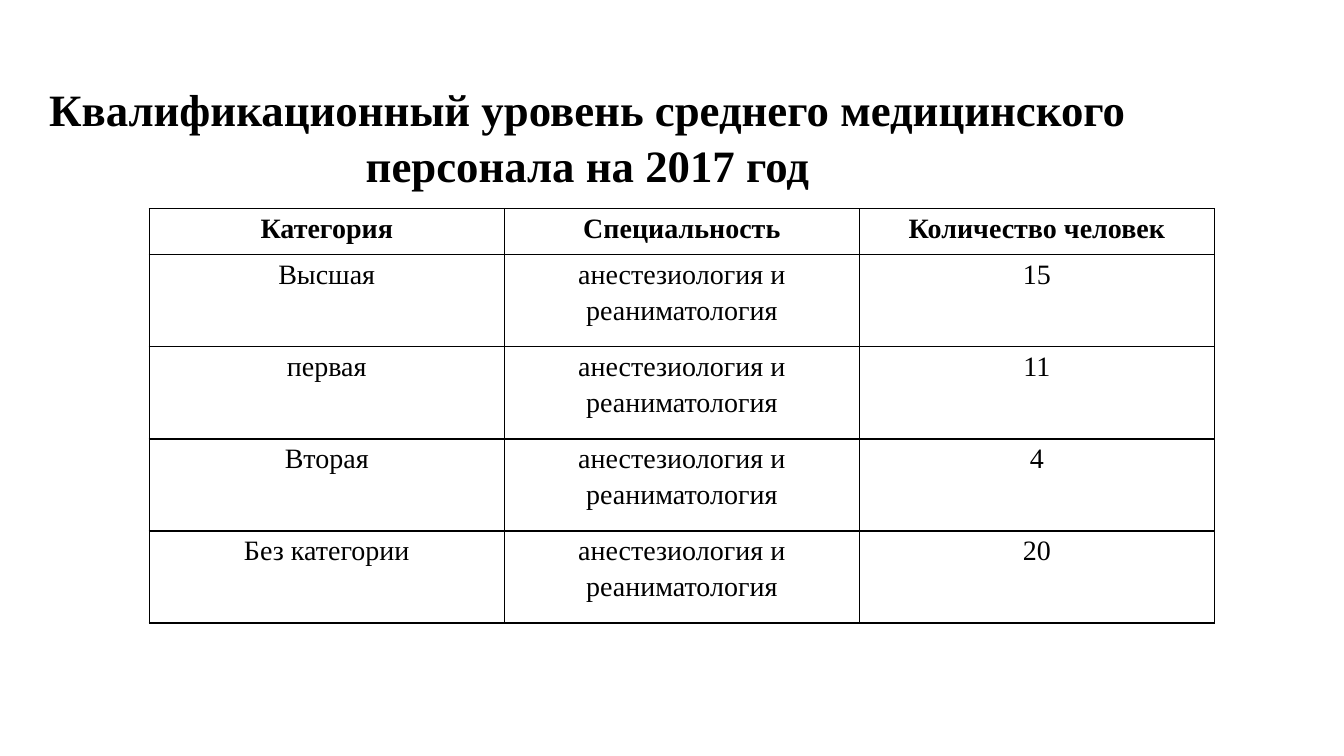
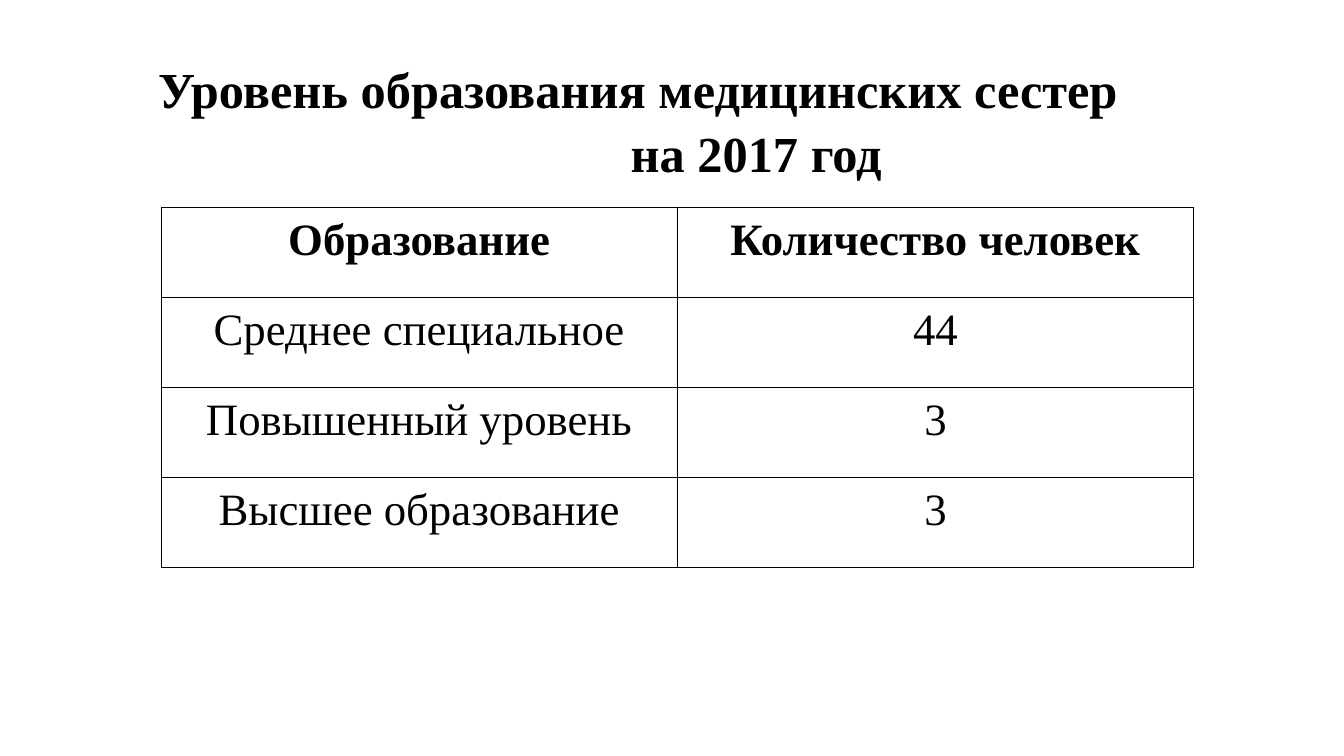
from dataclasses import dataclass

from lxml.etree import SubElement
from pptx import Presentation
from pptx.dml.color import RGBColor
from pptx.enum.text import MSO_ANCHOR, MSO_AUTO_SIZE, PP_ALIGN
from pptx.oxml.ns import qn
from pptx.presentation import Presentation as Deck
from pptx.slide import Slide
from pptx.table import _Cell as Cell
from pptx.text.text import _Paragraph as Paragraph
from pptx.util import Cm, Pt

FONT = "Times New Roman"
INK = "000000"
SPECIALTY = "анестезиология и реаниматология"


@dataclass(frozen=True)
class TitleLine:
    text: str
    indent: float = 0


@dataclass(frozen=True)
class Title:
    lines: tuple[TitleLine, ...]
    size: float
    top: float
    width: float
    height: float


@dataclass(frozen=True)
class Grid:
    rows: tuple[tuple[str, ...], ...]
    size: float
    left: float
    top: float
    column_width: float
    header_height: float
    row_height: float


@dataclass(frozen=True)
class Page:
    title: Title
    grid: Grid


PAGES = (
    Page(
        Title(
            (
                TitleLine("Квалификационный уровень среднего медицинского"),
                TitleLine("персонала на 2017 год"),
            ),
            size=32, top=1.91, width=29.62, height=3,
        ),
        Grid(
            (
                ("Категория", "Специальность", "Количество человек"),
                ("Высшая", SPECIALTY, "15"),
                ("первая", SPECIALTY, "11"),
                ("Вторая", SPECIALTY, "4"),
                ("Без категории", SPECIALTY, "20"),
            ),
            size=20, left=3.76, top=5.26, column_width=8.95,
            header_height=1.16, row_height=2.32,
        ),
    ),
    Page(
        Title(
            (
                TitleLine("Уровень образования медицинских сестер"),
                TitleLine("на 2017 год", indent=5.95),
            ),
            size=36, top=1.4, width=32.16, height=3.2,
        ),
        Grid(
            (
                ("Образование", "Количество человек"),
                ("Среднее специальное", "44"),
                ("Повышенный уровень", "3"),
                ("Высшее образование", "3"),
            ),
            size=32, left=4.06, top=5.23, column_width=13.01,
            header_height=2.27, row_height=2.27,
        ),
    ),
)


def color(value: str) -> RGBColor:
    return RGBColor.from_string(value)


def write(para: Paragraph, text: str, *, size: float, bold: bool, spacing: float) -> None:
    para.alignment = PP_ALIGN.CENTER
    para.line_spacing = spacing
    span = para.add_run()
    span.text = text
    span.font.name = FONT
    span.font.size = Pt(size)
    span.font.bold = bold
    span.font.color.rgb = color(INK)


def add_title(page: Slide, title: Title) -> None:
    box = page.shapes.title
    box.left, box.top = Cm(0), Cm(title.top)
    box.width, box.height = Cm(title.width), Cm(title.height)
    frame = box.text_frame
    frame.auto_size = MSO_AUTO_SIZE.NONE
    frame.word_wrap = True
    frame.vertical_anchor = MSO_ANCHOR.MIDDLE
    frame.margin_left = frame.margin_right = frame.margin_top = frame.margin_bottom = 0
    for index, line in enumerate(title.lines):
        para = frame.add_paragraph() if index else frame.paragraphs[0]
        if line.indent:
            para._p.get_or_add_pPr().set("marL", str(Cm(line.indent)))
        write(para, line.text, size=title.size, bold=True, spacing=1.05)


def add_borders(cell: Cell) -> None:
    properties = cell._tc.get_or_add_tcPr()
    for side in ("lnL", "lnR", "lnT", "lnB"):
        line = SubElement(properties, qn(f"a:{side}"), w=str(Pt(1)))
        fill = SubElement(line, qn("a:solidFill"))
        SubElement(fill, qn("a:srgbClr"), val=INK)


def add_grid(page: Slide, grid: Grid) -> None:
    row_count, column_count = len(grid.rows), len(grid.rows[0])
    height = grid.header_height + grid.row_height * (row_count - 1)
    table = page.shapes.add_table(
        row_count, column_count, Cm(grid.left), Cm(grid.top),
        Cm(grid.column_width * column_count), Cm(height),
    ).table
    table.horz_banding = False
    for column in table.columns:
        column.width = Cm(grid.column_width)
    for row_index, texts in enumerate(grid.rows):
        is_header = row_index == 0
        table.rows[row_index].height = Cm(grid.header_height if is_header else grid.row_height)
        for column_index, text in enumerate(texts):
            cell = table.cell(row_index, column_index)
            cell.margin_left = cell.margin_right = Cm(0.18)
            cell.margin_top = cell.margin_bottom = 0
            add_borders(cell)
            cell.fill.background()
            write(cell.text_frame.paragraphs[0], text, size=grid.size, bold=is_header, spacing=1.15)


def add_page(deck: Deck, content: Page) -> None:
    page = deck.slides.add_slide(deck.slide_layouts.get_by_name("Title Only"))
    add_title(page, content.title)
    add_grid(page, content.grid)


def main() -> None:
    deck = Presentation()
    deck.slide_width, deck.slide_height = Cm(33.87), Cm(19.05)
    for content in PAGES:
        add_page(deck, content)
    deck.save("out.pptx")


if __name__ == "__main__":
    main()
